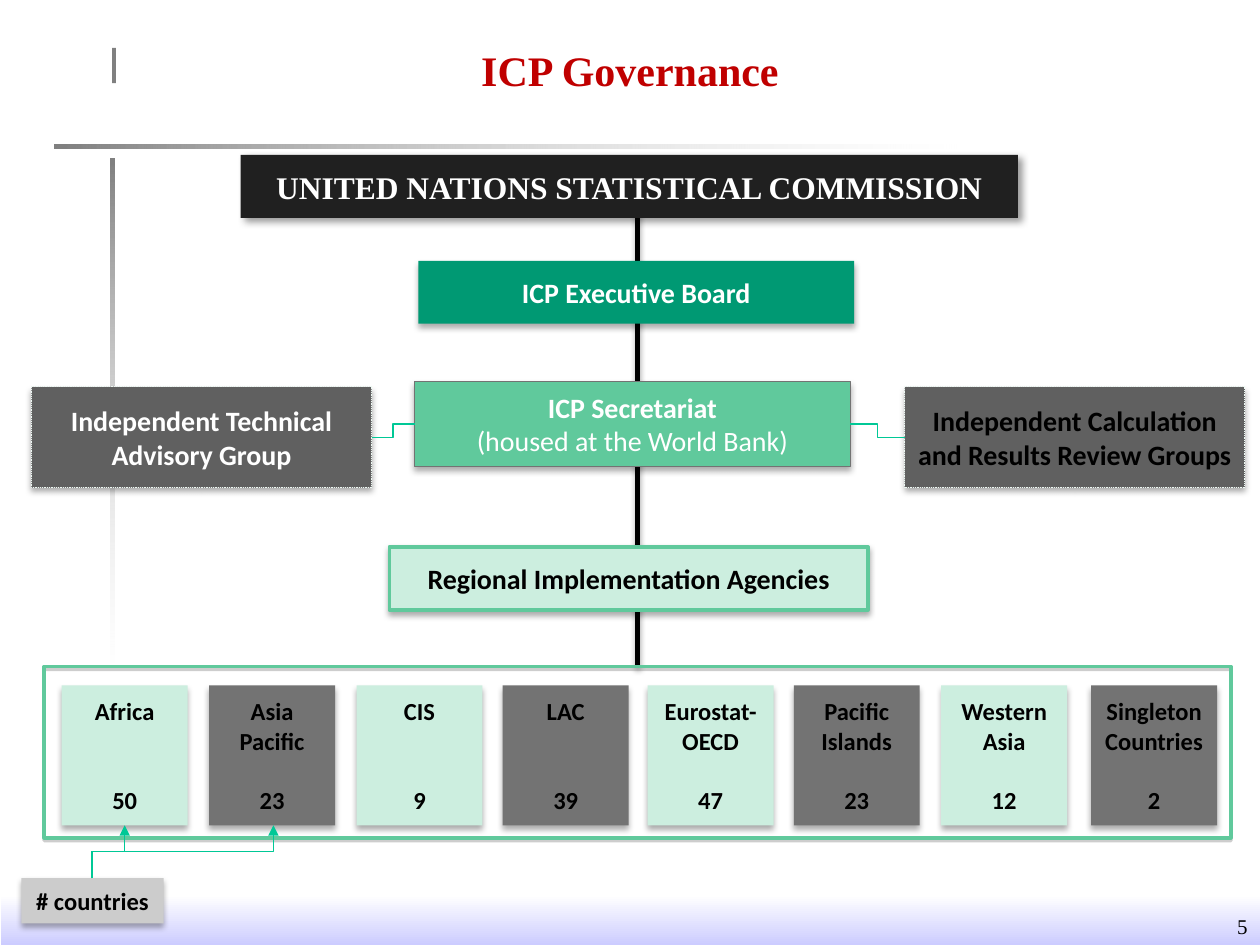
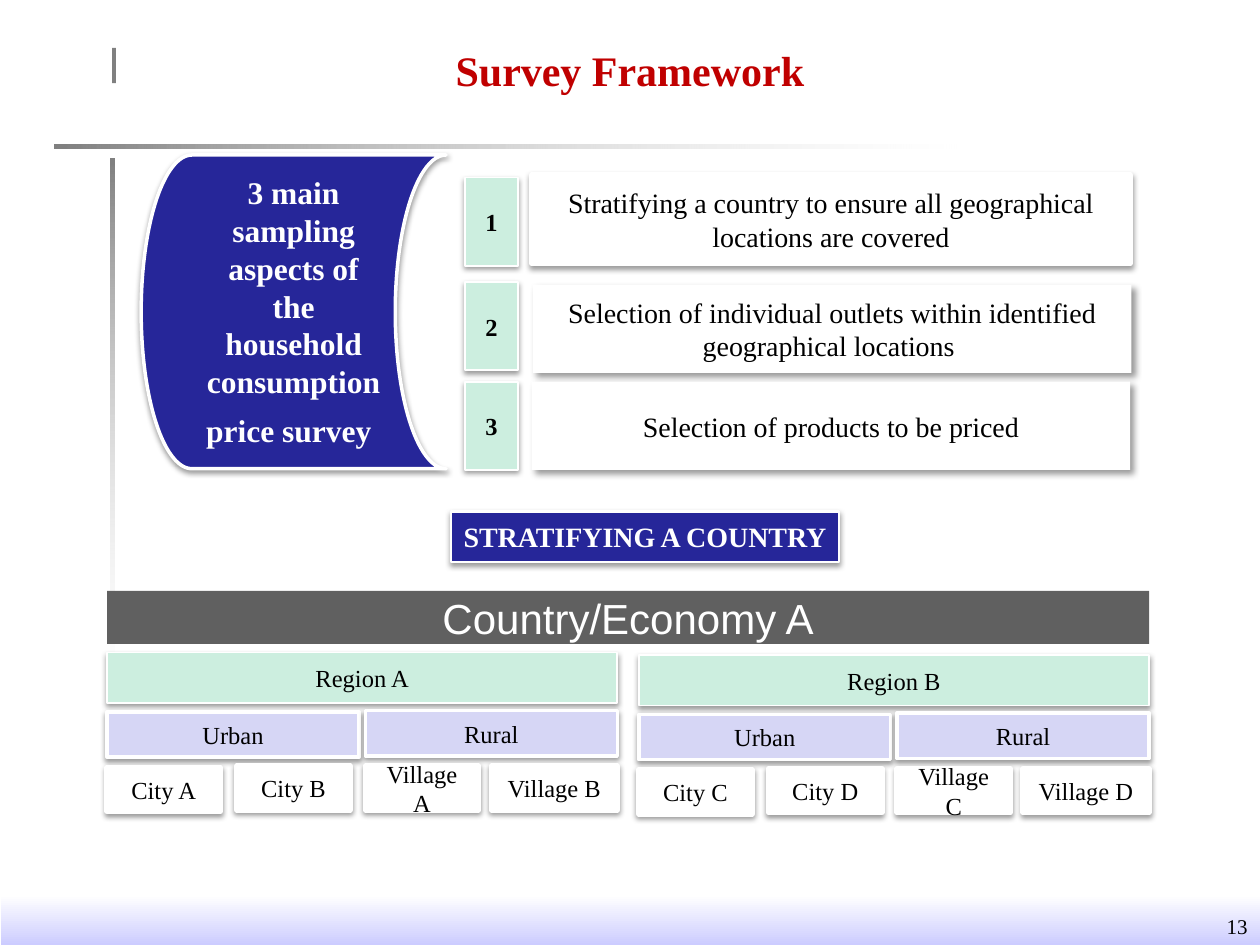
from dataclasses import dataclass

from lxml.etree import SubElement
from pptx import Presentation
from pptx.dml.color import RGBColor
from pptx.enum.dml import MSO_LINE
from pptx.enum.shapes import MSO_CONNECTOR, MSO_SHAPE
from pptx.enum.text import MSO_ANCHOR, PP_ALIGN
from pptx.oxml.ns import qn
from pptx.util import Pt

PX = 9144  # EMU per px, 100 px to the inch


@dataclass(frozen=True)
class Theme:
    black: str = "000000"
    white: str = "FFFFFF"
    title_red: str = "C00000"
    charcoal: str = "202020"
    slate: str = "606060"
    grey: str = "737373"
    rule_grey: str = "808080"
    label_grey: str = "CCCCCC"
    footer_blue: str = "CCCCFF"
    emerald: str = "009973"
    green: str = "60C99C"
    mint: str = "CCEEDF"
    pale_mint: str = "EEF9F4"
    link_green: str = "00C896"
    navy: str = "262699"
    lavender: str = "D6D6F5"
    serif: str = "Times New Roman"
    sans: str = "Calibri"
    banner: str = "Arial"
    title_size: int = 24
    heading_size: int = 18
    body_size: int = 16
    label_size: int = 14
    number_size: int = 12
    # Shadows: colour, opacity in percent, blur and distance in points, angle
    diagonal: tuple = ("000000", 40, 4, 3, 45)
    drop: tuple = ("000000", 32, 3.5, 2.2, 90)
    soft: tuple = ("000000", 38, 3.1, 1.6, 90)
    frame_shadow: tuple = ("808080", 38, 0, 1.6, 90)
    line_shadow: tuple = ("000000", 35, 3.1, 1.8, 90)


THEME = Theme()


def draw(page, place, kind=MSO_SHAPE.RECTANGLE, fill=None, line=None, width=1, shadow=None):
    """Add a shape (left, top, width, height) or a connector (from x, y, to x, y), in px."""
    is_connector = isinstance(kind, MSO_CONNECTOR)
    add = page.shapes.add_connector if is_connector else page.shapes.add_shape
    shape = add(kind, *(length * PX for length in place))
    if fill:
        shape.fill.solid()
        shape.fill.fore_color.rgb = RGBColor.from_string(fill)
    elif not is_connector:
        shape.fill.background()
    if line:
        shape.line.color.rgb = RGBColor.from_string(line)
        shape.line.width = Pt(width)
    else:
        shape.line.fill.background()
    effects = SubElement(shape._element.spPr, qn("a:effectLst"))
    if shadow:
        color, opacity, blur, distance, angle = shadow
        outer = SubElement(effects, qn("a:outerShdw"), blurRad=str(int(Pt(blur))),
                           dist=str(int(Pt(distance))), dir=str(angle * 60000), rotWithShape="0")
        tint = SubElement(outer, qn("a:srgbClr"), val=color)
        SubElement(tint, qn("a:alpha"), val=str(opacity * 1000))
    return shape


def write(box, text, size=THEME.label_size, font=THEME.serif, color=THEME.black, bold=False,
          align=PP_ALIGN.CENTER, anchor=MSO_ANCHOR.MIDDLE, inset=10, before=0):
    """Add one paragraph to the box, using its first paragraph while that is empty."""
    frame = box.text_frame
    frame.word_wrap = True
    frame.vertical_anchor = anchor
    frame.margin_left = frame.margin_right = inset * PX
    para = frame.paragraphs[-1]
    if para.runs:
        para = frame.add_paragraph()
    para.alignment = align
    if before:
        para.space_before = Pt(before)
    span = para.add_run()
    span.text = text
    span.font.size = Pt(size)
    span.font.name = font
    span.font.bold = bold
    span.font.color.rgb = RGBColor.from_string(color)
    return para


deck = Presentation()
deck.slide_width, deck.slide_height = 1000 * PX, 750 * PX

# Shared rules, footer band, title and page number
pages = []
for title, number in (("ICP Governance", "5"), ("Survey Framework", "13")):
    page = deck.slides.add_slide(deck.slide_layouts[6])
    pages.append(page)
    for place, start, end, angle, opacity in (
        ((43, 115, 716, 3), THEME.rule_grey, THEME.white, 0, 29),
        ((88, 126, 3, 406), THEME.rule_grey, THEME.white, 270, 29),
        ((1, 710, 999, 40), THEME.white, THEME.footer_blue, 270, 100),
    ):
        band = draw(page, place)
        band.fill.gradient()
        band.fill.gradient_angle = angle
        for stop, color in zip(band.fill.gradient_stops, (start, end)):
            stop.color.rgb = RGBColor.from_string(color)
        last_color = list(band._element.spPr.iter(qn("a:srgbClr")))[-1]
        SubElement(last_color, qn("a:alpha"), val=str(opacity * 1000))
    draw(page, (89, 38, 3, 28), fill=THEME.rule_grey)
    number_box = page.shapes.add_textbox(795 * PX, 720 * PX, 205 * PX, 30 * PX)
    write(number_box, number, size=THEME.number_size, align=PP_ALIGN.RIGHT, anchor=MSO_ANCHOR.TOP)
    title_box = page.shapes.add_textbox(50 * PX, 30 * PX, 900 * PX, 125 * PX)
    write(title_box, title, size=THEME.title_size, color=THEME.title_red, bold=True,
          anchor=MSO_ANCHOR.TOP)

governance, survey = pages

# Governance: chain of bodies
trunk = draw(governance, (506, 154, 506, 529), MSO_CONNECTOR.STRAIGHT, line=THEME.black,
             width=2.5, shadow=THEME.line_shadow)
commission = draw(governance, (191, 123, 617, 50), fill=THEME.charcoal, shadow=THEME.diagonal)
write(commission, "UNITED NATIONS STATISTICAL COMMISSION", size=THEME.heading_size,
      color=THEME.white, bold=True)
board = draw(governance, (332, 207, 346, 50), fill=THEME.emerald, shadow=THEME.drop)
write(board, "ICP Executive Board", size=THEME.body_size, font=THEME.sans,
      color=THEME.white, bold=True)
secretariat = draw(governance, (329, 303, 346, 67), fill=THEME.green, line=THEME.grey,
                   width=0.5, shadow=THEME.drop)
for text, bold in (("ICP Secretariat", True), ("(housed at the World Bank)", False)):
    write(secretariat, text, size=THEME.body_size, font=THEME.sans, color=THEME.white, bold=bold)
agencies = draw(governance, (309, 434, 380, 50), fill=THEME.mint, line=THEME.green,
                width=2, shadow=THEME.drop)
write(agencies, "Regional Implementation Agencies", size=THEME.body_size, font=THEME.sans,
      bold=True)

# Governance: regions and their numbers of countries
frame_box = draw(governance, (35, 529, 942, 136), line=THEME.green, width=2,
                 shadow=THEME.frame_shadow)
trunk.end_connect(frame_box, 0)
LINE_HEIGHT = 17
regions = (
    (49, ("Africa",), "50", 1),
    (166, ("Asia", "Pacific"), "23", 2),
    (283, ("CIS",), "9", 1),
    (399, ("LAC",), "39", 1),
    (514, ("Eurostat-OECD",), "47", 2),
    (630, ("Pacific Islands",), "23", 2),
    (747, ("Western Asia",), "12", 2),
    (866, ("Singleton Countries",), "2", 2),
)
for index, (left, names, count, name_lines) in enumerate(regions):
    region = draw(governance, (left, 544, 100, 111), shadow=THEME.drop,
                  fill=THEME.grey if index % 2 else THEME.mint)
    for name in names:
        write(region, name, font=THEME.sans, bold=True, inset=5)
    write(region, count, font=THEME.sans, bold=True, inset=5,
          before=LINE_HEIGHT * (3 - name_lines))

# Governance: independent groups beside the secretariat
groups = []
for left, text, color in (
    (25, "Independent Technical Advisory Group", THEME.white),
    (718, "Independent Calculation and Results Review Groups", THEME.black),
):
    group = draw(governance, (left, 307, 270, 80), fill=THEME.slate, line=THEME.pale_mint,
                 width=0.5, shadow=THEME.drop)
    group.line.dash_style = MSO_LINE.ROUND_DOT
    write(group, text, size=THEME.body_size, font=THEME.sans, color=color, bold=True)
    groups.append(group)
advisory, calculation = groups
for first, second, place in (
    (advisory, secretariat, (295, 347, 329, 337)),
    (secretariat, calculation, (675, 337, 718, 347)),
):
    link = draw(governance, place, MSO_CONNECTOR.ELBOW, line=THEME.link_green, width=0.75)
    link.begin_connect(first, 3)
    link.end_connect(second, 1)

# Governance: label pointing up at the first two counts
label = draw(governance, (17, 697, 113, 36), fill=THEME.label_grey, shadow=THEME.drop)
write(label, "# countries", font=THEME.sans, bold=True, inset=5)
start_x, start_y, end_y = 73, 697, 655
for end_x in (99, 216):
    # A quarter turn about the centre makes the elbow leave vertically
    center_x, center_y = (start_x + end_x) / 2, (start_y + end_y) / 2
    half_run, half_rise = (end_x - start_x) / 2, (start_y - end_y) / 2
    place = [round(length) for length in (center_x + half_rise, center_y + half_run,
                                          center_x - half_rise, center_y - half_run)]
    arrow = draw(governance, place, MSO_CONNECTOR.ELBOW, line=THEME.link_green, width=0.75)
    arrow._element.spPr.find(qn("a:xfrm")).set("rot", str(90 * 60000))
    SubElement(arrow.line._get_or_add_ln(), qn("a:tailEnd"), type="triangle")

# Survey: three sampling aspects
aspects = draw(survey, (112, 123, 242, 249), MSO_SHAPE.FLOWCHART_STORED_DATA,
               fill=THEME.navy, line=THEME.white, width=2, shadow=THEME.soft)
para = write(aspects, "3 main sampling aspects of the household consumption price survey",
             size=THEME.heading_size, color=THEME.white, bold=True)
tall_span = para.add_run()
tall_span.text = " "
tall_span.font.size = Pt(THEME.title_size)
steps = (
    ("Stratifying a country to ensure all geographical locations are covered",
     141, 422, 139, THEME.white, THEME.soft),
    ("Selection of individual outlets within identified geographical locations ",
     224, 423, 226, None, THEME.diagonal),
    ("Selection of products to be priced", 303, 422, 303, None, THEME.diagonal),
)
for number, (text, number_top, left, top, outline, shadow) in enumerate(steps, 1):
    step = draw(survey, (left, top, 475, 70), fill=THEME.white, line=outline, width=3,
                shadow=shadow)
    write(step, text, size=THEME.body_size)
    badge = draw(survey, (369, number_top, 42, 70), fill=THEME.mint, line=THEME.white,
                 shadow=THEME.soft)
    write(badge, str(number), bold=True)

# Survey: stratification of one country
heading = draw(survey, (358, 406, 308, 40), fill=THEME.navy, line=THEME.white, width=1.5,
               shadow=THEME.soft)
write(heading, "STRATIFYING A COUNTRY", size=THEME.body_size, color=THEME.white, bold=True)
country = draw(survey, (85, 469, 827, 42), fill=THEME.slate)
write(country, "Country/Economy A", size=THEME.title_size, font=THEME.banner, color=THEME.white)
for left, top, name, places in (
    (85, 518, "Region A", ("City A", "City B", "Village A", "Village B")),
    (507, 520, "Region B", ("City C", "City D", "Village C", "Village D")),
):
    cells = [
        (name, 0, 0, 405, 40, THEME.mint, 1),
        ("Urban", 0, 47, 200, 36, THEME.lavender, 2),
        ("Rural", 205, 46, 200, 36, THEME.lavender, 2),
    ]
    slots = ((0, 91, 90), (103, 90, 90), (205, 90, 90), (305, 90, 100))
    for place_name, (across, down, wide) in zip(places, slots):
        cells.append((place_name, across, down, wide, 35, THEME.white, 3))
    for text, across, down, wide, high, fill, outline_width in cells:
        cell = draw(survey, (left + across, top + down, wide, high), fill=fill,
                    line=THEME.white, width=outline_width, shadow=THEME.soft)
        write(cell, text)

deck.save("out.pptx")
